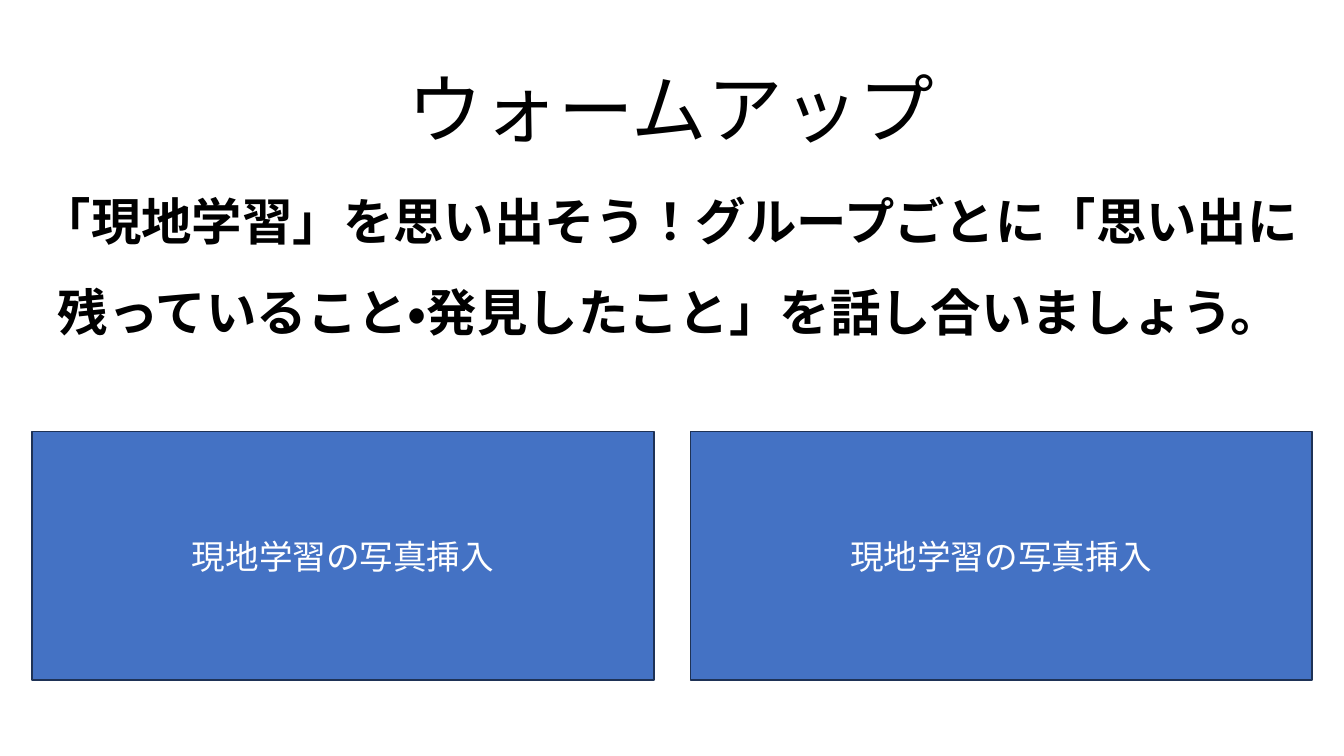
from dataclasses import dataclass

from pptx import Presentation
from pptx.dml.color import RGBColor
from pptx.enum.lang import MSO_LANGUAGE_ID as Language
from pptx.enum.shapes import MSO_SHAPE as Preset
from pptx.enum.text import MSO_ANCHOR as Anchor, MSO_AUTO_SIZE as AutoSize, PP_ALIGN as Align
from pptx.util import Cm, Pt


@dataclass(frozen=True)
class Theme:
    font: str = "Arial"
    ink: str = "000000"
    box_fill: str = "4472C4"
    box_line: str = "1E3256"
    box_text: str = "FFFFFF"
    title_size: int = 54
    task_size: int = 36
    box_size: int = 24


def write(frame, text, *, font, size, color, bold=False, spacing=1.0):
    """Put one centred, formatted paragraph into a text frame."""
    frame.word_wrap = True
    paragraph = frame.paragraphs[0]
    paragraph.alignment = Align.CENTER
    paragraph.line_spacing = spacing
    run = paragraph.add_run()
    run.text = text
    run.font.name = font
    run.font.size = Pt(size)
    run.font.bold = bold
    run.font.color.rgb = RGBColor.from_string(color)
    run.font.language_id = Language.JAPANESE


class SlideBuilder:
    def __init__(self, slide, theme):
        self.slide = slide
        self.theme = theme

    def text(self, text, left, top, width, height, *, size, bold=False):
        shape = self.slide.shapes.add_textbox(Cm(left), Cm(top), Cm(width), Cm(height))
        frame = shape.text_frame
        frame.margin_left = frame.margin_right = Cm(0.33)
        frame.margin_top = frame.margin_bottom = Cm(0.18)
        frame.auto_size = AutoSize.SHAPE_TO_FIT_TEXT
        write(frame, text, font=self.theme.font, size=size,
              color=self.theme.ink, bold=bold, spacing=1.5)

    def photo_box(self, text, left, top, width, height):
        theme = self.theme
        shape = self.slide.shapes.add_shape(
            Preset.RECTANGLE, Cm(left), Cm(top), Cm(width), Cm(height))
        shape.shadow.inherit = False
        shape.fill.solid()
        shape.fill.fore_color.rgb = RGBColor.from_string(theme.box_fill)
        shape.line.color.rgb = RGBColor.from_string(theme.box_line)
        shape.line.width = Pt(1)
        shape.text_frame.vertical_anchor = Anchor.MIDDLE
        write(shape.text_frame, text, font=theme.font,
              size=theme.box_size, color=theme.box_text)


def main():
    presentation = Presentation()
    presentation.slide_width = Cm(33.87)
    presentation.slide_height = Cm(19.05)
    slide = presentation.slides.add_slide(presentation.slide_layouts[6])
    theme = Theme()
    builder = SlideBuilder(slide, theme)

    # Title and task
    builder.text("ウォームアップ", 1.83, 0.25, 30.15, 3.81, size=theme.title_size)
    builder.text(
        "「現地学習」を思い出そう！グループごとに「思い出に"
        "残っていること・発見したこと」を話し合いましょう。",
        0.33, 3.86, 33.07, 4.95, size=theme.task_size, bold=True)

    # Two photo boxes side by side
    box_width, gap = 15.67, 0.92
    for column in range(2):
        left = 0.81 + column * (box_width + gap)
        builder.photo_box("現地学習の写真挿入", left, 10.87, box_width, 6.27)

    presentation.save("out.pptx")


if __name__ == "__main__":
    main()
